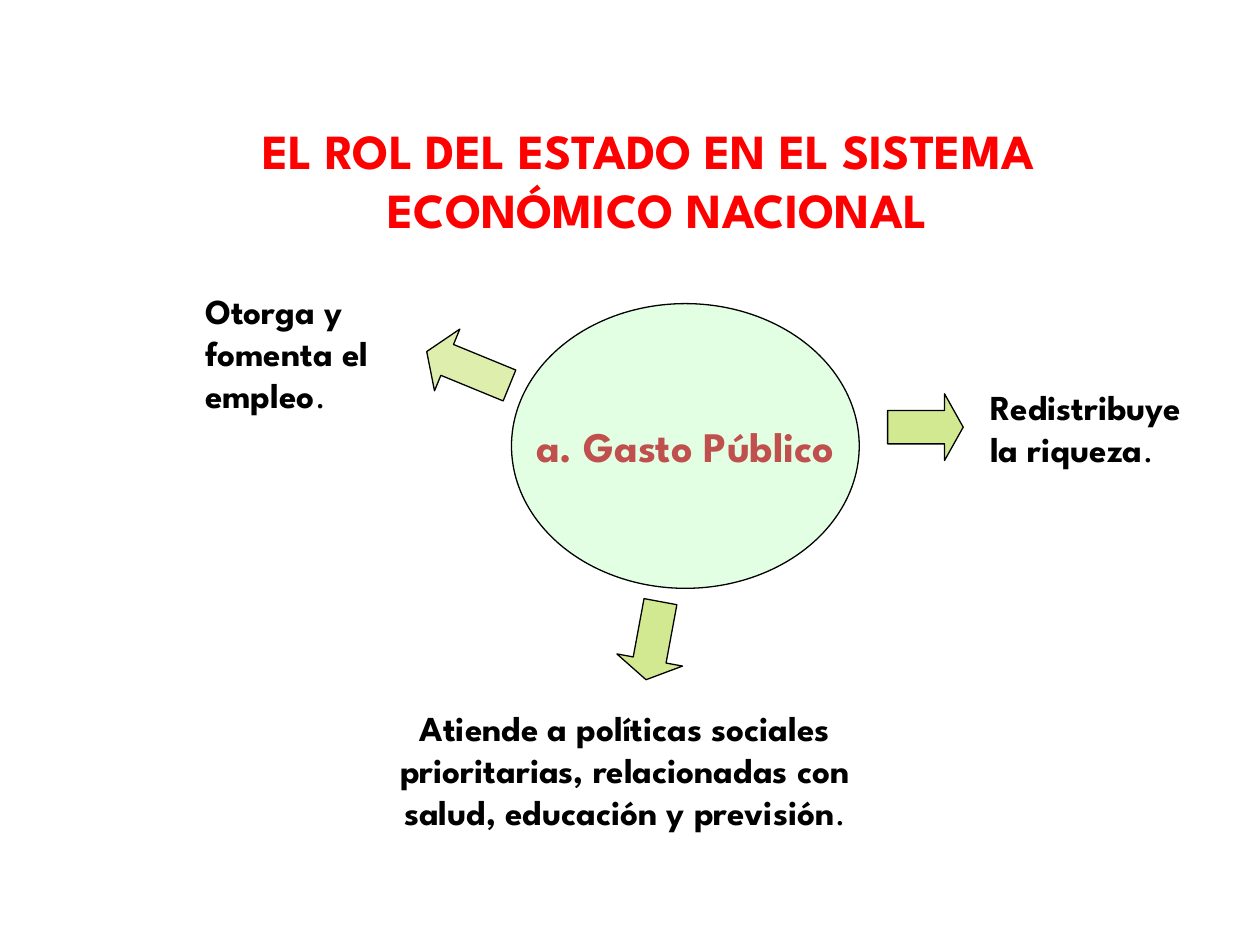
from lxml import etree
from pptx import Presentation
from pptx.dml.color import RGBColor
from pptx.enum import shapes, text
from pptx.oxml.ns import qn
from pptx.util import Inches, Pt

FONT = "League Spartan"
BLACK = RGBColor(0x00, 0x00, 0x00)
RED = RGBColor(0xFF, 0x00, 0x00)
BRICK = RGBColor(0xC0, 0x50, 0x4D)
GREEN = RGBColor(0x00, 0xFF, 0x00)
LIME = RGBColor(0x99, 0xCC, 0x00)


def add_run(paragraph, words, size, color, bold=True):
    run = paragraph.add_run()
    run.text = words
    run.font.name = FONT
    run.font.size = Pt(size)
    run.font.bold = bold
    run.font.color.rgb = color


def add_lines(frame, lines, size, color, align, full_stop=False):
    """Write one paragraph per line; the closing full stop is not bold."""
    for index, line in enumerate(lines):
        paragraph = frame.paragraphs[0] if index == 0 else frame.add_paragraph()
        paragraph.alignment = align
        add_run(paragraph, line, size, color)
    if full_stop:
        add_run(paragraph, ".", size, color, bold=False)


def add_text(slide, box, lines, size=20, color=BLACK,
             align=text.PP_ALIGN.LEFT, wrap=True, full_stop=True):
    frame = slide.shapes.add_textbox(*map(Inches, box)).text_frame
    frame.word_wrap = wrap
    frame.auto_size = text.MSO_AUTO_SIZE.SHAPE_TO_FIT_TEXT
    add_lines(frame, lines, size, color, align, full_stop)
    return frame


def add_tinted_shape(slide, kind, box, color, opacity):
    """Add an outlined shape whose fill has the given opacity in percent."""
    shape = slide.shapes.add_shape(kind, *map(Inches, box))
    shape.shadow.inherit = False
    shape.fill.solid()
    shape.fill.fore_color.rgb = color
    fill_color = shape._element.spPr.find(qn("a:solidFill"))[0]
    etree.SubElement(fill_color, qn("a:alpha"), val=str(opacity * 1000))
    shape.line.color.rgb = BLACK
    shape.line.width = Pt(0.75)
    return shape


def add_arrow(slide, box, rotation, head, opacity):
    arrow = add_tinted_shape(slide, shapes.MSO_SHAPE.DOWN_ARROW, box, LIME, opacity)
    arrow.rotation = rotation
    arrow.adjustments[1] = head


def add_title(slide):
    frame = add_text(slide, (1.38, 0.91, 7.29, 1.03),
                     ["EL ROL DEL ESTADO EN EL SISTEMA", "ECONÓMICO NACIONAL"],
                     28, RED, text.PP_ALIGN.CENTER, full_stop=False)
    # Each line is centred a little to the right of the box
    for paragraph, indent in zip(frame.paragraphs, (0.24, 0.38)):
        paragraph._p.get_or_add_pPr().set("marL", str(Inches(indent)))


def add_hub(slide):
    hub = add_tinted_shape(slide, shapes.MSO_SHAPE.OVAL,
                           (4.06, 2.41, 2.76, 2.26), GREEN, 11)
    frame = hub.text_frame
    frame.word_wrap = False
    frame.vertical_anchor = text.MSO_ANCHOR.MIDDLE
    add_lines(frame, ["a. Gasto Público"], 24, BRICK, text.PP_ALIGN.CENTER)


def main():
    deck = Presentation()
    deck.slide_width, deck.slide_height = Inches(10), Inches(7.5)
    slide = deck.slides.add_slide(deck.slide_layouts[6])

    # Effects of public spending
    add_text(slide, (1.53, 2.25, 1.73, 1.1), ["Otorga y fomenta el empleo"])
    add_text(slide, (7.76, 3.01, 1.92, 0.77), ["Redistribuye", "la riqueza"],
             wrap=False)
    add_text(slide, (2.95, 5.56, 4.02, 1.43),
             ["Atiende a políticas sociales prioritarias, relacionadas con "
              "salud, educación y previsión"], align=text.PP_ALIGN.CENTER)

    # Central concept and the arrows leaving it
    add_hub(slide)
    add_arrow(slide, (4.92, 4.77, 0.53, 0.63), 10.5, 0.3, 43)
    add_arrow(slide, (3.45, 2.57, 0.53, 0.71), 112.3, 0.33, 32)
    add_arrow(slide, (7.08, 3.09, 0.53, 0.6), 270, 0.28, 43)

    # Title
    add_title(slide)
    deck.save("out.pptx")


if __name__ == "__main__":
    main()
